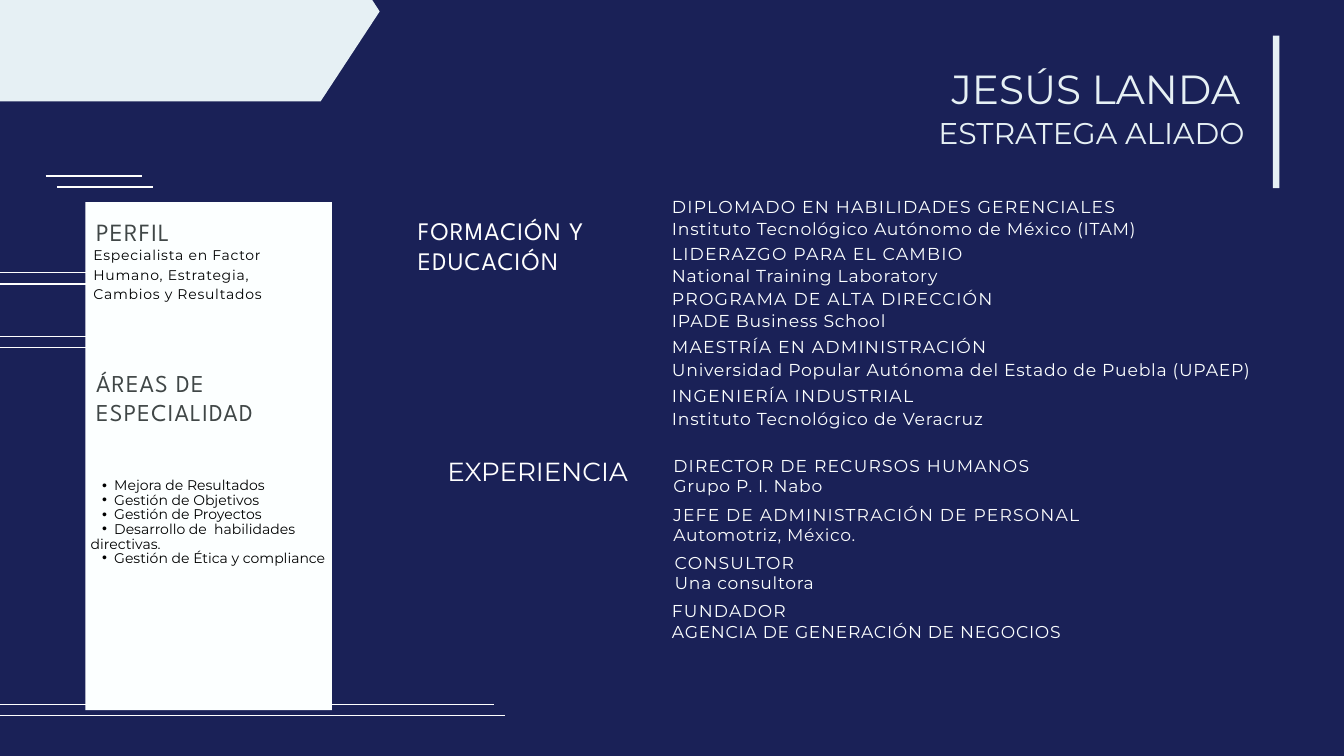
from dataclasses import dataclass

from lxml import etree
from pptx import Presentation
from pptx import util as u
from pptx.dml.color import RGBColor
from pptx.enum import shapes, text
from pptx.oxml.ns import qn

NAVY, PALE, WHITE, PANEL = "1A2157", "E6F0F4", "FFFFFF", "FCFFFF"
GREY, BLACK = "404747", "000000"
SANS, HEAD = "Montserrat", "League Spartan"
LEFT, MID, RIGHT = text.PP_ALIGN.LEFT, text.PP_ALIGN.CENTER, text.PP_ALIGN.RIGHT


@dataclass
class Style:
    size: float
    lead: float
    color: str
    font: str = SANS
    track: float = 0
    align: text.PP_ALIGN = LEFT


@dataclass
class Label:
    words: str
    left: float
    top: float
    width: float
    height: float
    style: Style


@dataclass
class Entry:
    role: str
    place: str
    top: float
    left: float = 10
    color: str = PANEL


@dataclass
class Rule:
    left: float
    right: float
    top: float


def rgb(color: str) -> RGBColor:
    return RGBColor.from_string(color)


def paint(shape, color: str) -> None:
    shape.shadow.inherit = False
    shape.fill.solid()
    shape.fill.fore_color.rgb = rgb(color)
    shape.line.fill.background()


def write(box, label: Label) -> None:
    """Place a text shape and fill it, one paragraph a line."""
    box.left, box.top = u.Inches(label.left), u.Inches(label.top)
    box.width, box.height = u.Inches(label.width), u.Inches(label.height)
    frame, style = box.text_frame, label.style
    frame.text = label.words
    frame.word_wrap = True
    frame.auto_size = text.MSO_AUTO_SIZE.NONE
    frame.vertical_anchor = text.MSO_ANCHOR.TOP
    frame.margin_left = frame.margin_right = 0
    frame.margin_top = frame.margin_bottom = 0
    for para in frame.paragraphs:
        para.alignment = style.align
        para.line_spacing = u.Pt(style.lead)
        para.space_before = u.Pt(0)
        for run in para.runs:
            run.font.size = u.Pt(style.size)
            run.font.name = style.font
            run.font.color.rgb = rgb(style.color)
            if style.track:
                run.font._element.set("spc", str(round(style.track * 100)))


def add_text(slide, label: Label):
    box = slide.shapes.add_textbox(0, 0, 0, 0)
    write(box, label)
    return box


def add_block(slide, left: float, top: float, width: float, height: float,
              color: str) -> None:
    block = slide.shapes.add_shape(
        shapes.MSO_SHAPE.RECTANGLE, u.Inches(left), u.Inches(top),
        u.Inches(width), u.Inches(height))
    paint(block, color)


def add_pair(slide, rule: Rule) -> None:
    """Draw a thin line and its twin, a step lower and to the right."""
    for step in (0, 0.165):
        top = u.Inches(rule.top + step)
        line = slide.shapes.add_connector(
            shapes.MSO_CONNECTOR.STRAIGHT, u.Inches(rule.left + step), top,
            u.Inches(rule.right + step), top)
        line.line.color.rgb = rgb(WHITE)
        line.line.width = u.Pt(1.44)
        etree.SubElement(line._element.spPr, qn("a:effectLst"))


def add_flag(slide) -> None:
    edge = [(-0.64, 1.51), (4.77, 1.51), (5.65, 0.17), (4.77, -1.18), (-0.64, -1.18)]
    points = [(u.Inches(x), u.Inches(y)) for x, y in edge]
    pen = slide.shapes.build_freeform(*points[0])
    pen.add_line_segments(points[1:], close=True)
    paint(pen.convert_to_shape(), PALE)


def add_entry(slide, entry: Entry, size: float, lead: float, gap: float) -> None:
    lines = ((entry.role, 0, 1.3), (entry.place, gap, 0.8))
    for words, drop, track in lines:
        style = Style(size, lead, entry.color, track=track)
        add_text(slide, Label(words, entry.left, entry.top + drop, 9.23, 0.31, style))


def bullet(para) -> None:
    props = para._p.get_or_add_pPr()
    props.set("marL", str(u.Inches(0.35)))
    props.set("indent", str(u.Inches(-0.18)))
    etree.SubElement(props, qn("a:buFont")).set("typeface", "Arial")
    etree.SubElement(props, qn("a:buChar")).set("char", "•")


RULES = [
    Rule(-1.69, 4.07, 5.01),
    Rule(-2.52, 7.35, 10.48),
    Rule(-3.86, 2.42, 4.06),
    Rule(0.68, 2.11, 2.62),
]

NAME = Label("JESÚS LANDA", 9.28, 0.83, 9.18, 0.81,
             Style(43.5, 61, PALE, align=RIGHT))

LABELS = [
    Label("ESTRATEGA ALIADO", 13.56, 1.62, 4.96, 0.58,
          Style(32.1, 44.9, PALE, align=RIGHT)),
    Label("FORMACIÓN Y EDUCACIÓN", 6.22, 3.2, 3.14, 0.89,
          Style(27, 32.4, WHITE, HEAD, 1.3)),
    Label("EXPERIENCIA", 6.43, 6.84, 3.14, 0.41,
          Style(28, 29.1, WHITE, align=MID)),
    Label("PERFIL", 1.43, 3.22, 1.74, 0.45, Style(26.5, 31.8, GREY, HEAD, 1.3)),
    Label("ÁREAS DE ESPECIALIDAD", 1.43, 5.48, 3.07, 0.84,
          Style(25.9, 31.1, GREY, HEAD, 1.3)),
    Label("Especialista en Factor Humano, Estrategia, Cambios y Resultados",
          1.39, 3.63, 2.54, 0.88, Style(15, 21, BLACK, track=0.8)),
]

AREAS = [
    "Mejora de Resultados",
    "Gestión de Objetivos",
    "Gestión de Proyectos",
    "Desarrollo de  habilidades",
    "directivas.",
    "Gestión de Ética y compliance",
]

STUDIES = [
    Entry("DIPLOMADO EN HABILIDADES GERENCIALES",
          "Instituto Tecnológico Autónomo de México (ITAM)", 2.92),
    Entry("LIDERAZGO PARA EL CAMBIO", "National Training Laboratory", 3.62),
    Entry("PROGRAMA DE ALTA DIRECCIÓN", "IPADE Business School", 4.29),
    Entry("MAESTRÍA EN ADMINISTRACIÓN",
          "Universidad Popular Autónoma del Estado de Puebla (UPAEP)", 5.01),
    Entry("INGENIERÍA INDUSTRIAL", "Instituto Tecnológico de Veracruz", 5.74),
]

JOBS = [
    Entry("DIRECTOR DE RECURSOS HUMANOS", "Grupo P. I. Nabo", 6.78, 10.02),
    Entry("JEFE DE ADMINISTRACIÓN DE PERSONAL", "Automotriz, México.", 7.5, 10.02,
          "FAFAFA"),
    Entry("CONSULTOR", "Una consultora", 8.22, 10.04),
    Entry("FUNDADOR", "AGENCIA DE GENERACIÓN DE NEGOCIOS", 8.94),
]


def main() -> None:
    deck = Presentation()
    deck.slide_width, deck.slide_height = u.Inches(20), u.Inches(11.25)
    slide = deck.slides.add_slide(deck.slide_layouts[5])
    slide.background.fill.solid()
    slide.background.fill.fore_color.rgb = rgb(NAVY)

    for rule in RULES:
        add_pair(slide, rule)
    add_flag(slide)
    add_block(slide, 1.27, 3.01, 3.67, 7.56, PANEL)
    add_block(slide, 18.94, 0.53, 0.1, 2.27, PALE)

    write(slide.shapes.title, NAME)
    for label in LABELS:
        add_text(slide, label)

    areas = add_text(slide, Label("\n".join(AREAS), 1.35, 7.13, 3.5, 1.26,
                                  Style(15, 15.6, BLACK)))
    for para in areas.text_frame.paragraphs:
        if para.text != "directivas.":
            bullet(para)

    for entry in STUDIES:
        add_entry(slide, entry, 18.5, 22.2, 0.33)
    for entry in JOBS:
        add_entry(slide, entry, 18.4, 22.1, 0.3)
    deck.save("out.pptx")


if __name__ == "__main__":
    main()
